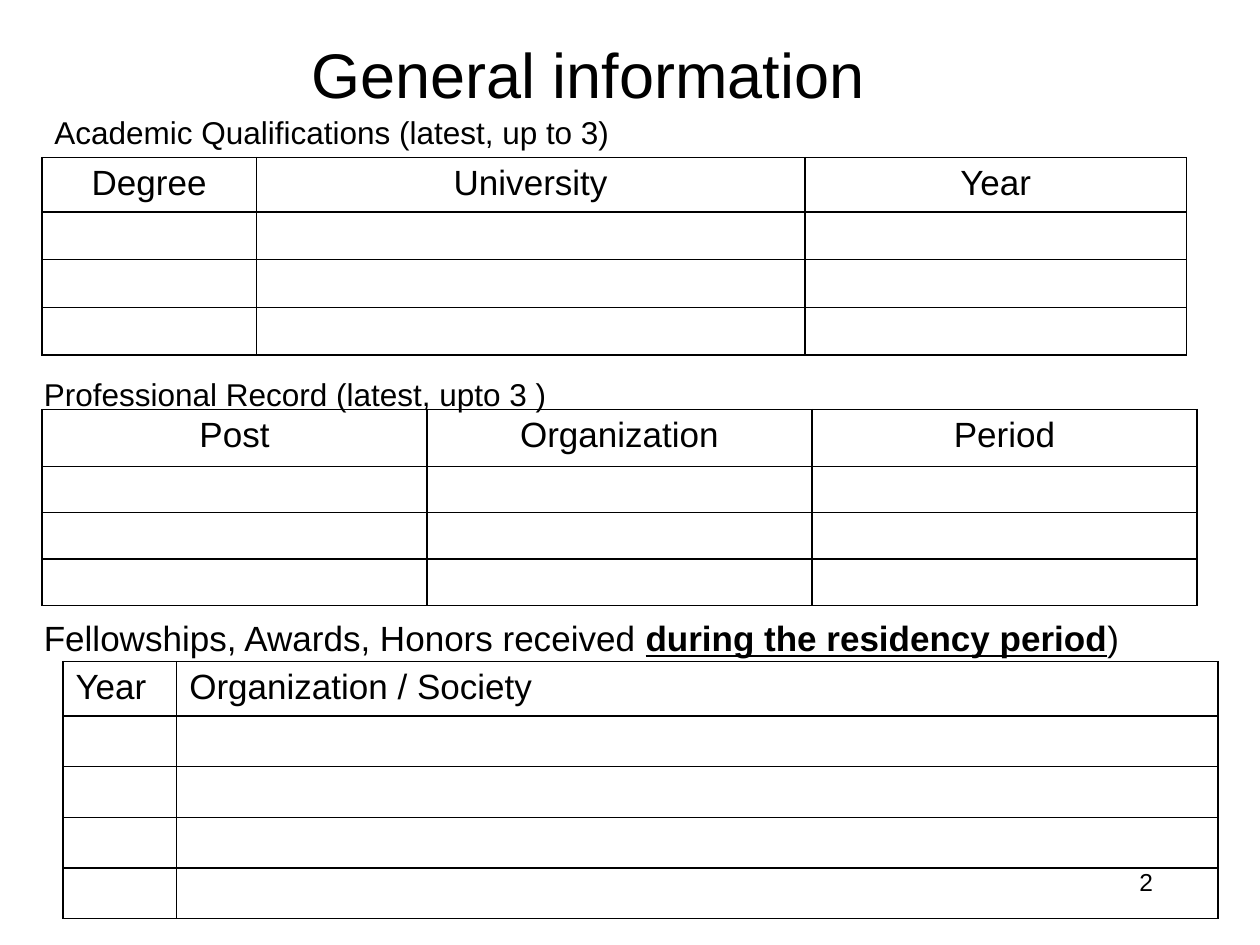
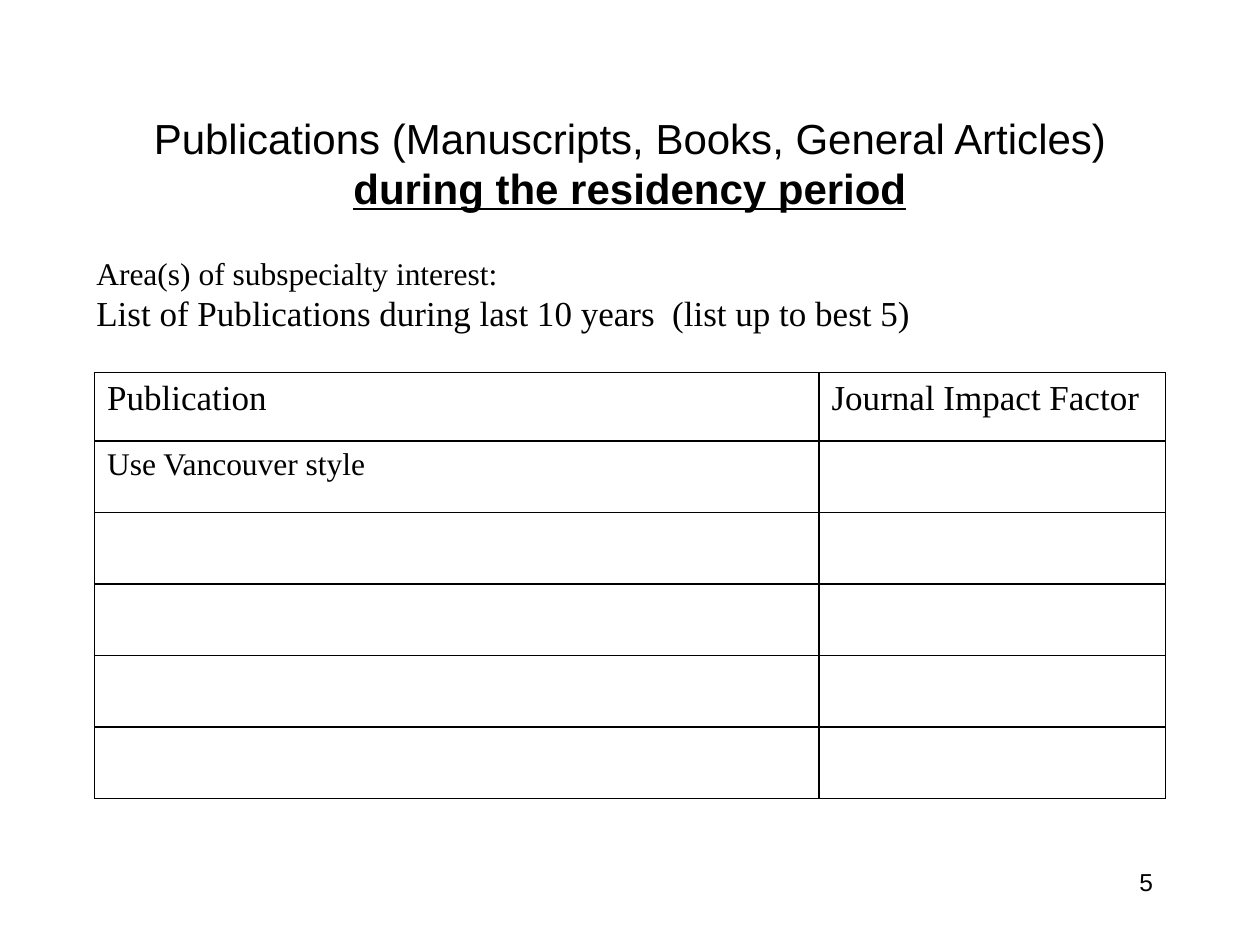
from lxml import etree
from pptx import Presentation
from pptx import util as u
from pptx.dml.color import RGBColor
from pptx.enum import text
from pptx.oxml.ns import qn

Pt = u.Pt
COLORS = {"text": "000000", "border": "000000"}
SANS, SERIF = "Arial", "Times New Roman"
LEFT, CENTER, RIGHT = (text.PP_ALIGN.LEFT, text.PP_ALIGN.CENTER,
                       text.PP_ALIGN.RIGHT)
TOP, MIDDLE, BOTTOM = (text.MSO_ANCHOR.TOP, text.MSO_ANCHOR.MIDDLE,
                       text.MSO_ANCHOR.BOTTOM)
EMPHASIS = "during the residency period"
NUMBER_BOX = (516, 492, 150, 36)

# Paragraphs are (size, [pieces]); a piece equal to EMPHASIS is bold and underlined.
SLIDES = [
    {
        "number": "2", "font": SANS,
        "title": ((144, 12, 384, 60), 36, ["General information"]),
        "labels": [
            ((24, 54, 378, 36), BOTTOM, True,
             [(18, ["Academic Qualifications (latest, up to 3)"])]),
            ((18, 203.5, 525, 36), BOTTOM, True,
             [(18, ["Professional Record (latest, upto 3 )"])]),
            ((18, 349, 634, 55), TOP, False,
             [(20, ["Fellowships, Awards, Honors received ", EMPHASIS, ")"])]),
        ],
        "tables": [
            {"at": (24, 90), "cols": [122.5, 313.5, 218], "header": 30,
             "row": 27.2, "blank": 3, "align": CENTER,
             "heads": ["Degree", "University", "Year"]},
            {"at": (24, 234), "cols": [220] * 3, "header": 32.5,
             "row": 26.5, "blank": 3, "align": CENTER,
             "heads": ["Post", "Organization", "Period"]},
            {"at": (36, 378), "cols": [65, 595], "header": 31,
             "row": 28.9, "blank": 4, "align": LEFT,
             "heads": ["Year", "Organization / Society"]},
        ],
    },
    {
        "number": "5", "font": SERIF,
        "title": ((54, 48, 612, 90), 24,
                  ["Publications (Manuscripts, Books, General Articles) ", EMPHASIS]),
        "labels": [
            ((48, 141.5, 612, 53), TOP, True,
             [(18, ["Area(s) of subspecialty interest:"]),
              (20, ["List of Publications during last 10 years  (list up to best 5)"])]),
        ],
        "tables": [
            {"at": (54, 213), "cols": [414, 198], "header": 39,
             "row": 40.9, "blank": 5, "align": LEFT,
             "heads": ["Publication", "Journal Impact Factor"],
             "hint": "Use Vancouver style"},
        ],
    },
]


def write(p, pieces, size, font, align=LEFT):
    p.alignment = align
    for piece in pieces:
        r = p.add_run()
        r.text = piece
        r.font.size, r.font.name = Pt(size), font
        r.font.color.rgb = RGBColor.from_string(COLORS["text"])
        if piece == EMPHASIS:
            r.font.bold = r.font.underline = True


def add_text(s, box, paragraphs, font, align=LEFT, anchor=TOP, wrap=True):
    tf = s.shapes.add_textbox(*map(Pt, box)).text_frame
    tf.word_wrap, tf.vertical_anchor = wrap, anchor
    for i, (size, pieces) in enumerate(paragraphs):
        p = tf.add_paragraph() if i else tf.paragraphs[0]
        write(p, pieces, size, font, align)


def outline(cell):
    """Give a cell thin borders on all sides and no fill."""
    tc_pr = cell._tc.get_or_add_tcPr()
    for side in ("lnL", "lnR", "lnT", "lnB"):
        ln = etree.SubElement(tc_pr, qn(f"a:{side}"), w=str(Pt(1)))
        fill = etree.SubElement(ln, qn("a:solidFill"))
        etree.SubElement(fill, qn("a:srgbClr"), val=COLORS["border"])
    cell.fill.background()


def add_form(s, form, font):
    """Add a table with a header row and blank rows to fill in."""
    heights = [form["header"]] + [form["row"]] * form["blank"]
    table = s.shapes.add_table(
        len(heights), len(form["cols"]), *map(Pt, form["at"]),
        Pt(sum(form["cols"])), Pt(sum(heights))).table
    table.first_row = table.horz_banding = False
    for column, width in zip(table.columns, form["cols"]):
        column.width = Pt(width)
    for row, height in zip(table.rows, heights):
        row.height = Pt(height)
    for cell in table.iter_cells():
        outline(cell)
        # A small end mark keeps blank rows from growing.
        cell.text_frame.paragraphs[0]._p.get_or_add_endParaRPr().set("sz", "1200")
    for i, head in enumerate(form["heads"]):
        write(table.cell(0, i).text_frame.paragraphs[0], [head], 20, font,
              form["align"])
    if "hint" in form:
        write(table.cell(1, 0).text_frame.paragraphs[0], [form["hint"]], 18, font)


def main():
    prs = Presentation()
    prs.slide_width, prs.slide_height = Pt(720), Pt(540)
    for content in SLIDES:
        s = prs.slides.add_slide(prs.slide_layouts[6])
        font = content["font"]
        add_text(s, NUMBER_BOX, [(14, [content["number"]])], SANS, RIGHT)
        box, size, pieces = content["title"]
        add_text(s, box, [(size, pieces)], SANS, CENTER, MIDDLE)
        for box, anchor, wrap, paragraphs in content["labels"]:
            add_text(s, box, paragraphs, font, anchor=anchor, wrap=wrap)
        for form in content["tables"]:
            add_form(s, form, font)
    prs.save("out.pptx")


if __name__ == "__main__":
    main()
